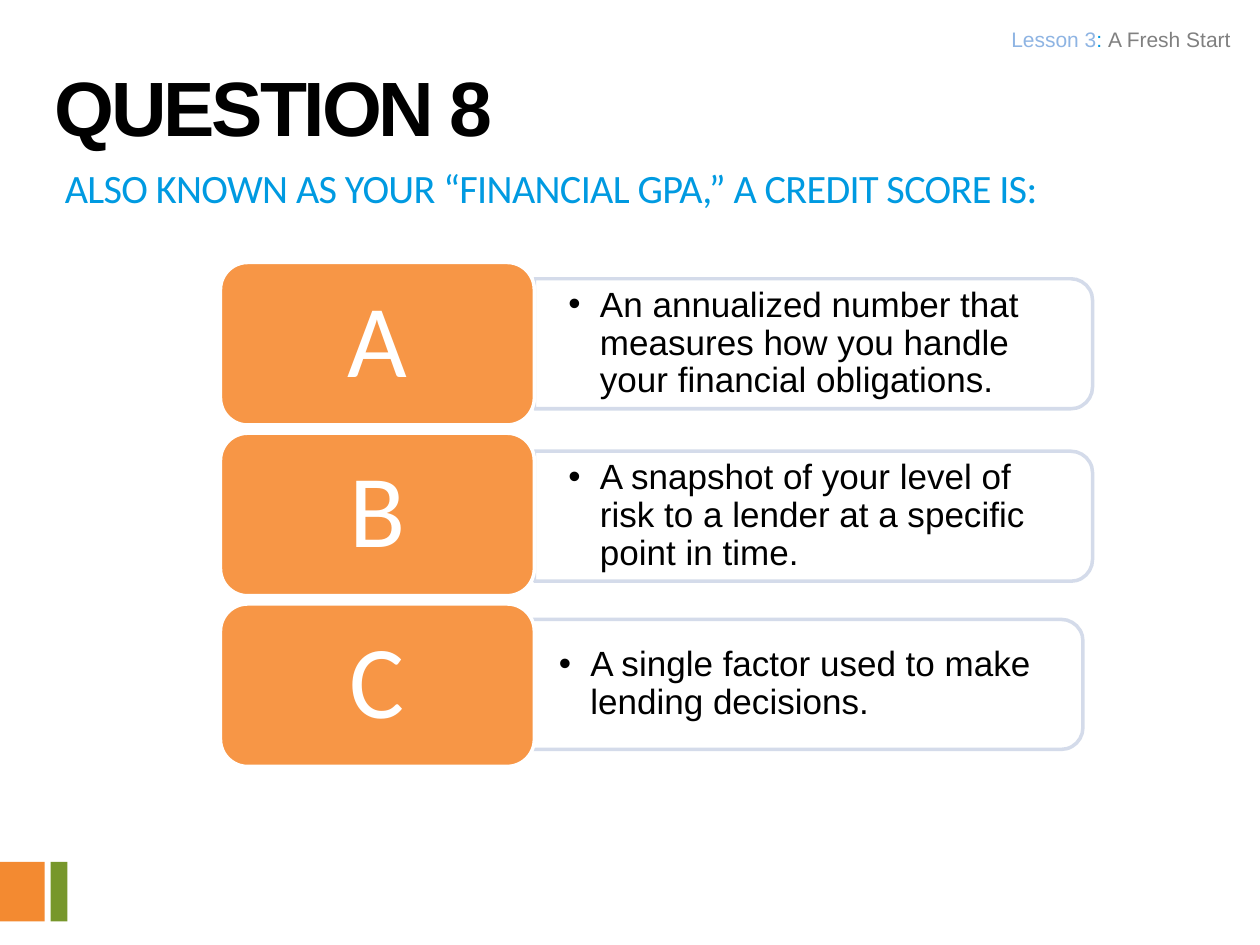
from dataclasses import dataclass

from lxml.etree import SubElement
from pptx import Presentation
from pptx.dml.color import RGBColor
from pptx.enum.shapes import MSO_SHAPE
from pptx.enum.text import MSO_ANCHOR, PP_ALIGN
from pptx.oxml.ns import qn
from pptx.util import Pt


@dataclass(frozen=True)
class Theme:
    heading_font: str = "Arial"
    accent_font: str = "Calibri"
    black: str = "000000"
    white: str = "FFFFFF"
    gray: str = "808080"
    sky: str = "8EB4E3"
    blue: str = "009AE1"
    card: str = "F79646"
    panel_line: str = "D0D8E8"
    orange: str = "F38A31"
    green: str = "77972B"
    title_size: float = 44
    prompt_size: float = 23
    letter_size: float = 59
    answer_size: float = 20
    lesson_size: float = 12


THEME = Theme()
ANSWERS = [
    # letter, answer, panel shift right and down from its place beside the card
    ("A", "An annualized number that measures how you handle your financial obligations.", 0, 0),
    ("B", "A snapshot of your level of risk to a lender at a specific point in time.", 0, 1),
    ("C", "A single factor used to make lending decisions.", -5.5, -0.5),
]


def add_run(paragraph, text, font, size, color, bold=False, spacing=None):
    run = paragraph.add_run()
    run.text = text
    run.font.name = font
    run.font.size = Pt(size)
    run.font.bold = bold
    run.font.color.rgb = RGBColor.from_string(color)
    if spacing is not None:
        run.font._element.set("spc", str(round(spacing * 100)))


def set_frame(shape, margin_x=7.2, margin_y=3.6, anchor=MSO_ANCHOR.TOP):
    """Apply wrapping, margins and anchor; return the first paragraph."""
    frame = shape.text_frame
    frame.word_wrap = True
    frame.vertical_anchor = anchor
    frame.margin_left = frame.margin_right = Pt(margin_x)
    frame.margin_top = frame.margin_bottom = Pt(margin_y)
    return frame.paragraphs[0]


def add_text_box(slide, left, top, width, height, **frame):
    box = slide.shapes.add_textbox(Pt(left), Pt(top), Pt(width), Pt(height))
    return set_frame(box, **frame)


def add_block(slide, kind, left, top, width, height, fill, line=None):
    block = slide.shapes.add_shape(kind, Pt(left), Pt(top), Pt(width), Pt(height))
    block.shadow.inherit = False
    block.fill.solid()
    block.fill.fore_color.rgb = RGBColor.from_string(fill)
    if line is None:
        block.line.fill.background()
    else:
        block.line.color.rgb = RGBColor.from_string(line)
        block.line.width = Pt(2)
    return block


def add_bullet(paragraph, indent):
    properties = paragraph._p.get_or_add_pPr()
    properties.set("marL", str(Pt(indent)))
    properties.set("indent", str(-Pt(indent)))
    SubElement(properties, qn("a:buFont"), typeface=THEME.heading_font)
    SubElement(properties, qn("a:buChar"), char="•")


def add_footer_marks(slide, left, top, height):
    add_block(slide, MSO_SHAPE.RECTANGLE, left, top, 25.5, height, THEME.orange)
    add_block(slide, MSO_SHAPE.RECTANGLE, left + 29, top, 9.5, height, THEME.green)


def add_lesson_label(slide, left, top, width, height):
    paragraph = add_text_box(slide, left, top, width, height, margin_x=5.76, margin_y=2.88)
    paragraph.alignment = PP_ALIGN.RIGHT
    for text, color in (("Lesson 3", THEME.sky), (": ", THEME.blue), ("A Fresh Start", THEME.gray)):
        add_run(paragraph, text, THEME.heading_font, THEME.lesson_size, color)


def add_title(slide, left, top, width, height):
    paragraph = add_text_box(slide, left, top, width, height)
    paragraph.line_spacing = Pt(59)
    add_run(paragraph, "QUESTION 8", THEME.heading_font, THEME.title_size,
            THEME.black, bold=True, spacing=-1.8)


def add_prompt(slide, left, top, width, height):
    paragraph = add_text_box(slide, left, top, width, height)
    add_run(paragraph, "ALSO KNOWN AS YOUR “FINANCIAL GPA,” A CREDIT SCORE IS:",
            THEME.accent_font, THEME.prompt_size, THEME.blue, spacing=-0.4)


def add_panel(slide, left, top, width, height, answer):
    """Answer panel rounded on its right side only, with one bullet."""
    # The shape is upright before its quarter turn, so its sides are swapped.
    panel = add_block(slide, MSO_SHAPE.ROUND_2_SAME_RECTANGLE,
                      left + (width - height) / 2, top + (height - width) / 2,
                      height, width, THEME.white, THEME.panel_line)
    panel.rotation = 90
    for color in panel._element.spPr.iter(qn("a:srgbClr")):
        SubElement(color, qn("a:alpha"), val="90000")
    paragraph = add_text_box(slide, left, top, width - 3.6, height, margin_x=19.5,
                             margin_y=9.75, anchor=MSO_ANCHOR.MIDDLE)
    add_bullet(paragraph, 18)
    paragraph.line_spacing = 0.9
    add_run(paragraph, answer, THEME.heading_font, THEME.answer_size, THEME.black)


def add_card(slide, left, top, width, height, letter):
    card = add_block(slide, MSO_SHAPE.ROUNDED_RECTANGLE, left, top, width, height,
                     THEME.card, THEME.white)
    paragraph = set_frame(card, 18, 9, MSO_ANCHOR.MIDDLE)
    paragraph.alignment = PP_ALIGN.CENTER
    paragraph.line_spacing = 0.9
    add_run(paragraph, letter, THEME.accent_font, THEME.letter_size, THEME.white)


def add_answers(slide, left, top, width, height):
    gap = 4.7
    row_height = (height - gap * (len(ANSWERS) - 1)) / len(ANSWERS)
    card_width = width * 0.36
    panel_height = row_height * 0.8
    for index, (letter, answer, shift_x, shift_y) in enumerate(ANSWERS):
        row_top = top + index * (row_height + gap)
        panel_top = row_top + (row_height - panel_height) / 2
        add_panel(slide, left + card_width + shift_x, panel_top + shift_y,
                  width - card_width, panel_height, answer)
        add_card(slide, left, row_top, card_width, row_height, letter)


def main():
    presentation = Presentation()
    presentation.slide_width, presentation.slide_height = Pt(720), Pt(540)
    slide = presentation.slides.add_slide(presentation.slide_layouts[6])
    add_footer_marks(slide, 0, 492.5, 34)
    add_prompt(slide, 30, 90, 684, 72)
    add_answers(slide, 126, 150, 498.3, 288)
    add_lesson_label(slide, 288, 12.25, 421, 23)
    add_title(slide, 24, 24, 623.5, 60)
    presentation.save("out.pptx")


if __name__ == "__main__":
    main()
